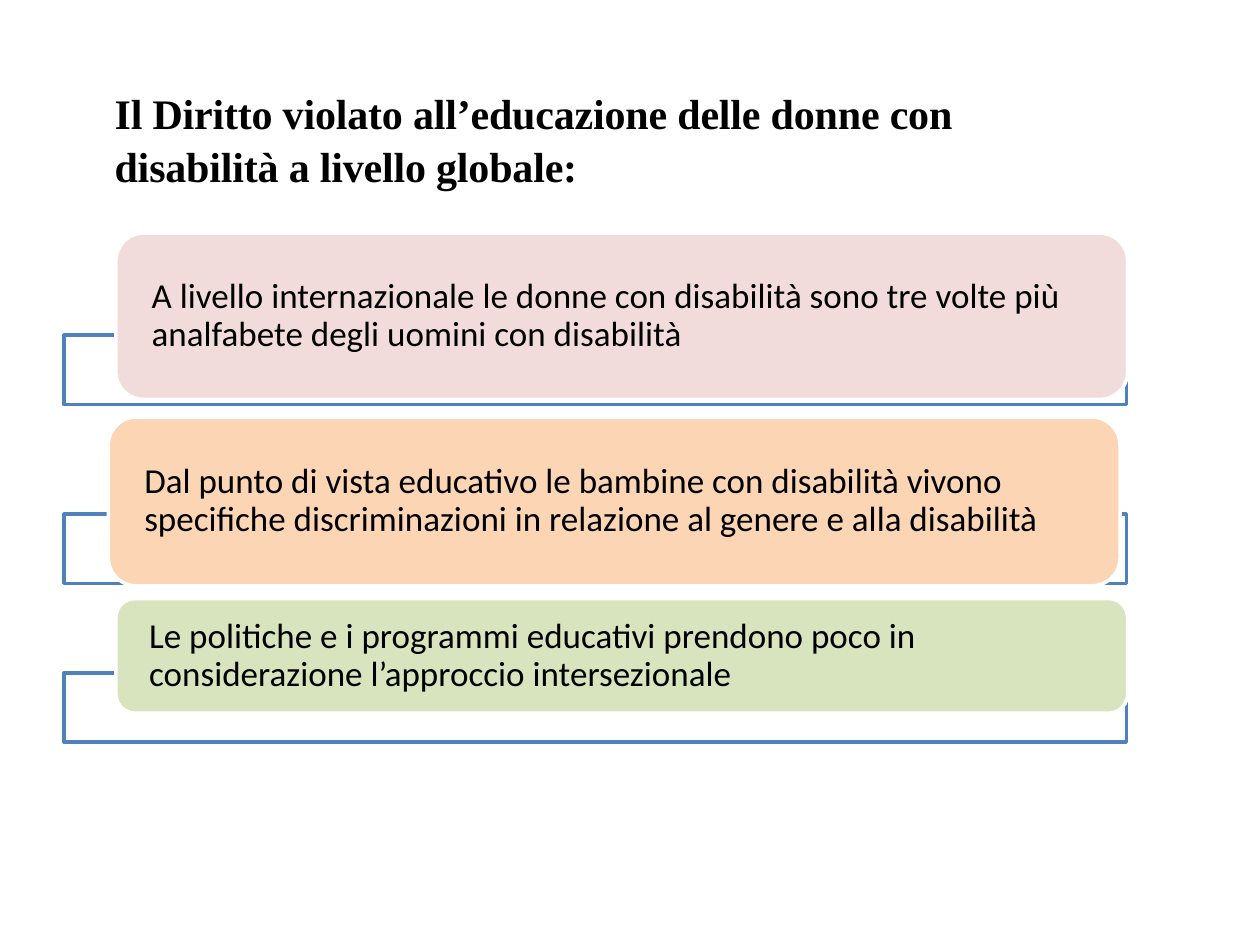
from dataclasses import dataclass

from pptx import Presentation, util as u
from pptx.dml.color import RGBColor
from pptx.enum import shapes, text


@dataclass(frozen=True)
class Theme:
    ink: str = "000000"
    paper: str = "FFFFFF"
    edge: str = "4F81BD"
    head: str = "Times New Roman"
    body: str = "Calibri"
    big: int = 24
    mid: int = 20
    line: int = 2


T = Theme()
WIDE, HIGH = 10, 7.5
TITLE = "Il Diritto violato all’educazione delle donne con disabilità a livello globale:"
TITLE_BOX = (0.9, 0.65, 8.02, 0.82)
BAR_X, BAR_W, BAR_H = 0.51, 8.43, 0.55
CARD_W = 8.03
# text, fill, card left, card top, card height, bar top
CARDS = [
    ("A livello internazionale le donne con disabilità sono tre volte più "
     "analfabete degli uomini con disabilità", "F2DCDB", 0.92, 1.85, 1.32, 2.66),
    ("Dal punto di vista educativo le bambine con disabilità vivono specifiche "
     "discriminazioni in relazione al genere e alla disabilità",
     "FCD5B5", 0.86, 3.31, 1.34, 4.08),
    ("Le politiche e i programmi educativi prendono poco in considerazione "
     "l’approccio intersezionale", "D7E4BD", 0.92, 4.75, 0.91, 5.34),
]


def rgb(code):
    return RGBColor.from_string(code)


def write(shape, words, font=T.body, size=T.mid, bold=False, anchor="MIDDLE",
          pad=(0.22, 0, 0.22, 0), lead=0.9, track=0):
    """Fill a shape with one left-aligned paragraph; track is in 1/100 pt."""
    tf = shape.text_frame
    tf.word_wrap = True
    tf.auto_size = text.MSO_AUTO_SIZE.NONE
    tf.vertical_anchor = text.MSO_ANCHOR[anchor]
    tf.margin_left, tf.margin_top, tf.margin_right, tf.margin_bottom = map(u.Inches, pad)
    par = tf.paragraphs[0]
    par.alignment = text.PP_ALIGN.LEFT
    par.line_spacing = lead
    run = par.add_run()
    run.text = words
    run.font.name, run.font.size, run.font.bold = font, u.Pt(size), bold
    run.font.color.rgb = rgb(T.ink)
    if track:
        run._r.get_or_add_rPr().set("spc", str(track))


def block(slide, kind, box, fill, line):
    shape = slide.shapes.add_shape(shapes.MSO_SHAPE[kind], *map(u.Inches, box))
    shape.shadow.inherit = False
    shape.fill.solid()
    shape.fill.fore_color.rgb = rgb(fill)
    shape.line.color.rgb = rgb(line)
    shape.line.width = u.Pt(T.line)
    return shape


def main():
    deck = Presentation()
    deck.slide_width, deck.slide_height = u.Inches(WIDE), u.Inches(HIGH)
    slide = deck.slides.add_slide(deck.slide_layouts[5])

    title = slide.shapes.title
    title.left, title.top, title.width, title.height = map(u.Inches, TITLE_BOX)
    write(title, TITLE, font=T.head, size=T.big, bold=True, anchor="TOP",
          pad=(0.01, 0.03, 0, 0), lead=1.04, track=-10)

    for words, fill, left, top, high, bar in CARDS:
        block(slide, "RECTANGLE", (BAR_X, bar, BAR_W, BAR_H), T.paper, T.edge)
        card = block(slide, "ROUNDED_RECTANGLE", (left, top, CARD_W, high), fill, T.paper)
        write(card, words)

    deck.save("out.pptx")


if __name__ == "__main__":
    main()
